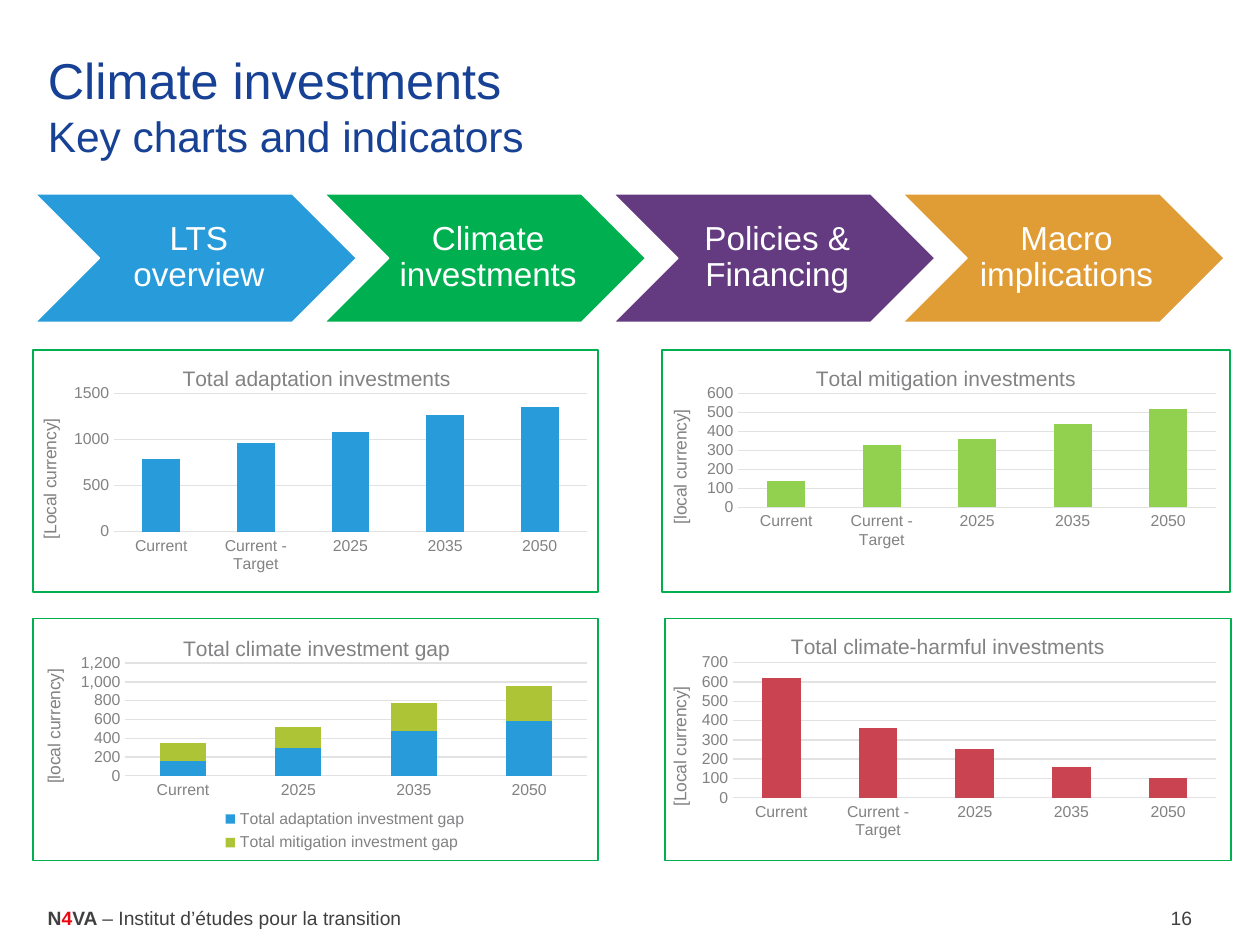
from lxml import etree
from pptx import Presentation
from pptx import util as u
from pptx.chart.data import CategoryChartData
from pptx.dml.color import RGBColor
from pptx.enum import chart as charts, shapes, text
from pptx.oxml.ns import qn

BLUE, GREEN, PURPLE, ORANGE = "289CDB", "00B050", "643A81", "E09C35"
LIME, OLIVE, RED = "92D050", "ACC435", "C94450"
NAVY, DARK, GREY, PALE, WHITE = "174195", "404041", "828284", "E2E2E3", "FFFFFF"
PERIODS = ["Current", "Current - Target", "2025", "2035", "2050"]


def color(value):
    return RGBColor.from_string(value)


def style_font(font, size, ink, bold=False):
    font.name, font.size, font.bold = "Arial", u.Pt(size), bold
    font.color.rgb = color(ink)


def write(para, content, size=11, ink=DARK, bold=False):
    span = para.add_run()
    span.text = content
    style_font(span.font, size, ink, bold)


def place(parent, index, bounds, inner=False):
    for old in parent.findall(qn("c:layout")):
        parent.remove(old)
    layout = etree.Element(qn("c:layout"))
    manual = etree.SubElement(layout, qn("c:manualLayout"))
    settings = [("layoutTarget", "inner")] if inner else []
    settings += [("xMode", "edge"), ("yMode", "edge"), *zip("xywh", bounds)]
    for tag, value in settings:
        etree.SubElement(manual, qn(f"c:{tag}")).set("val", str(value))
    parent.insert(index, layout)


class Builder:
    """Holds the deck style and the current page."""

    def __init__(self):
        self.deck = Presentation()
        self.deck.slide_width, self.deck.slide_height = u.Cm(25.4), u.Cm(19.05)
        self.page = self.deck.slides.add_slide(self.deck.slide_layouts[5])

    def title(self, heading, subheading):
        box = self.page.shapes.title
        box.left, box.top, box.width, box.height = map(u.Cm, (0.71, 1.12, 24, 2))
        frame = box.text_frame
        frame.auto_size = text.MSO_AUTO_SIZE.NONE
        frame.vertical_anchor = text.MSO_ANCHOR.MIDDLE
        para = frame.paragraphs[0]
        para.alignment = text.PP_ALIGN.LEFT
        write(para, heading, size=28.8, ink=NAVY)
        para.add_line_break()
        write(para, subheading, size=24.3, ink=NAVY)

    def label(self, left, width, spans, align=text.PP_ALIGN.LEFT):
        box = self.page.shapes.add_textbox(u.Cm(left), u.Cm(18.14), u.Cm(width), u.Cm(0.74))
        box.text_frame.word_wrap = True
        para = box.text_frame.paragraphs[0]
        para.alignment = align
        for content, style in spans:
            write(para, content, **style)

    def shape(self, kind, bounds, line, weight, fill=None):
        box = self.page.shapes.add_shape(kind, *map(u.Cm, bounds))
        box.shadow.inherit = False
        if fill:
            box.fill.solid()
            box.fill.fore_color.rgb = color(fill)
        else:
            box.fill.background()
        box.line.color.rgb = color(line)
        box.line.width = u.Pt(weight)
        return box

    def chevron(self, left, content, fill):
        box = self.shape(shapes.MSO_SHAPE.CHEVRON, (left, 3.91, 6.48, 2.59), WHITE, 0.85, fill)
        frame = box.text_frame
        frame.word_wrap = True
        frame.vertical_anchor = text.MSO_ANCHOR.MIDDLE
        frame.margin_left = u.Cm(0.2)
        frame.margin_right = frame.margin_top = frame.margin_bottom = u.Cm(0.08)
        para = frame.paragraphs[0]
        para.alignment = text.PP_ALIGN.CENTER
        para.line_spacing = 0.9
        write(para, content, size=19, ink=WHITE)

    def frame(self, bounds):
        self.shape(shapes.MSO_SHAPE.RECTANGLE, bounds, GREEN, 1)

    def chart(self, bounds, title, unit, plot, top, step, periods, series, number="0"):
        data = CategoryChartData()
        data.categories = periods
        for name, values, _ in series:
            data.add_series(name, values)
        chart = self.page.shapes.add_chart(
            charts.XL_CHART_TYPE.COLUMN_STACKED, *map(u.Cm, bounds), data).chart
        style_font(chart.font, 10, DARK)
        chart.has_title = True
        write(chart.chart_title.text_frame.paragraphs[0], title, size=12, ink=GREY)
        bars = chart.plots[0]
        bars.gap_width, bars.overlap, bars.vary_by_categories = 150, 100, False
        for item, (_, _, fill) in zip(bars.series, series):
            item.format.fill.solid()
            item.format.fill.fore_color.rgb = color(fill)

        categories, amounts = chart.category_axis, chart.value_axis
        for axis in (categories, amounts):
            axis.major_tick_mark = axis.minor_tick_mark = charts.XL_TICK_MARK.NONE
            style_font(axis.tick_labels.font, 9, GREY)
        amounts.has_major_gridlines = True
        for line in (categories.format.line, amounts.major_gridlines.format.line):
            line.color.rgb = color(PALE)
            line.width = u.Pt(0.75)
        amounts.format.line.fill.background()
        amounts.minimum_scale, amounts.maximum_scale, amounts.major_unit = 0, top, step
        amounts.tick_labels.number_format = number
        amounts.tick_labels.number_format_is_linked = False
        amounts.has_title = True
        write(amounts.axis_title.text_frame.paragraphs[0], unit, size=10, ink=GREY)

        place(chart.element.find(".//" + qn("c:plotArea")), 0, plot, inner=True)
        chart.has_legend = len(series) > 1
        if chart.has_legend:
            chart.legend.position = charts.XL_LEGEND_POSITION.BOTTOM
            chart.legend.include_in_layout = False
            style_font(chart.legend.font, 9, GREY)
            place(chart.element.find(".//" + qn("c:legend")), 1, (0.32, 0.77, 0.46, 0.22))


def main():
    slide = Builder()
    slide.label(22.3, 1.98, [("16", {})], text.PP_ALIGN.RIGHT)
    slide.label(0.71, 8.61, [
        ("N", {"bold": True}), ("4", {"bold": True, "ink": "EE0612"}),
        ("VA ", {"bold": True}), ("– Institut d’études pour la transition", {})])
    slide.title("Climate investments", "Key charts and indicators")

    steps = [("LTS overview", BLUE), ("Climate investments", GREEN),
             ("Policies & Financing", PURPLE), ("Macro implications", ORANGE)]
    for index, (content, fill) in enumerate(steps):
        slide.chevron(0.71 + 5.83 * index, content, fill)

    for bounds in [(0.66, 7.06, 11.4, 4.88), (13.34, 7.06, 11.46, 4.88),
                   (0.66, 12.47, 11.4, 4.88), (13.41, 12.47, 11.4, 4.88)]:
        slide.frame(bounds)

    slide.chart((0.71, 7.06, 11.35, 4.88), "Total adaptation investments", "[Local currency]",
                (0.14, 0.18, 0.84, 0.57), 1500, 500, PERIODS,
                [("Total adaptation investments", (790, 960, 1080, 1270, 1360), BLUE)])
    slide.chart((13.34, 7.06, 11.46, 4.88), "Total mitigation investments", "[local currency]",
                (0.135, 0.18, 0.84, 0.47), 600, 100, PERIODS,
                [("Total mitigation investments", (140, 330, 360, 440, 520), LIME)])
    slide.chart((0.71, 12.5, 11.35, 4.83), "Total climate investment gap", "[local currency]",
                (0.16, 0.18, 0.82, 0.47), 1200, 200, PERIODS[:1] + PERIODS[2:],
                [("Total adaptation investment gap", (160, 300, 480, 580), BLUE),
                 ("Total mitigation investment gap", (190, 220, 300, 380), OLIVE)], "#,##0")
    slide.chart((13.41, 12.47, 11.4, 4.95), "Total climate-harmful investments", "[Local currency]",
                (0.12, 0.18, 0.855, 0.55), 700, 100, PERIODS,
                [("Series 1", (620, 360, 250, 160, 100), RED)], "#,##0")
    slide.deck.save("out.pptx")


if __name__ == "__main__":
    main()
